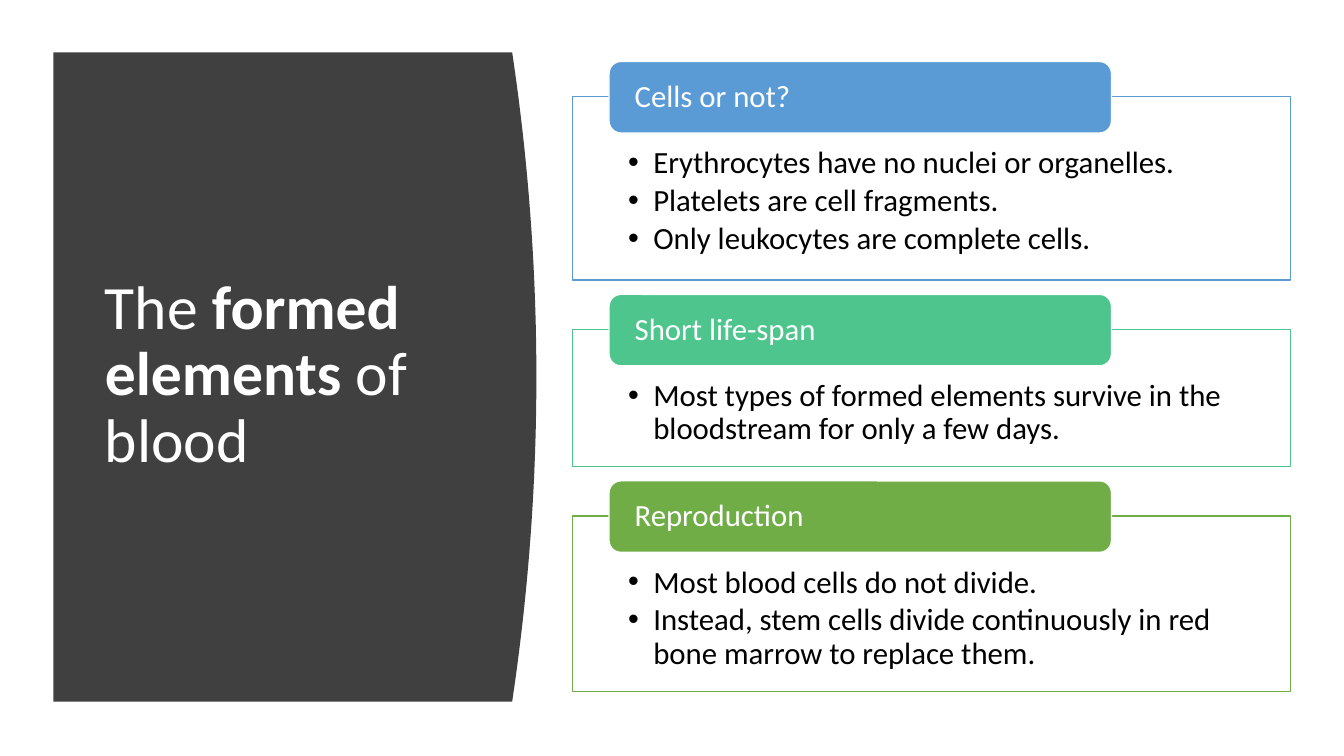
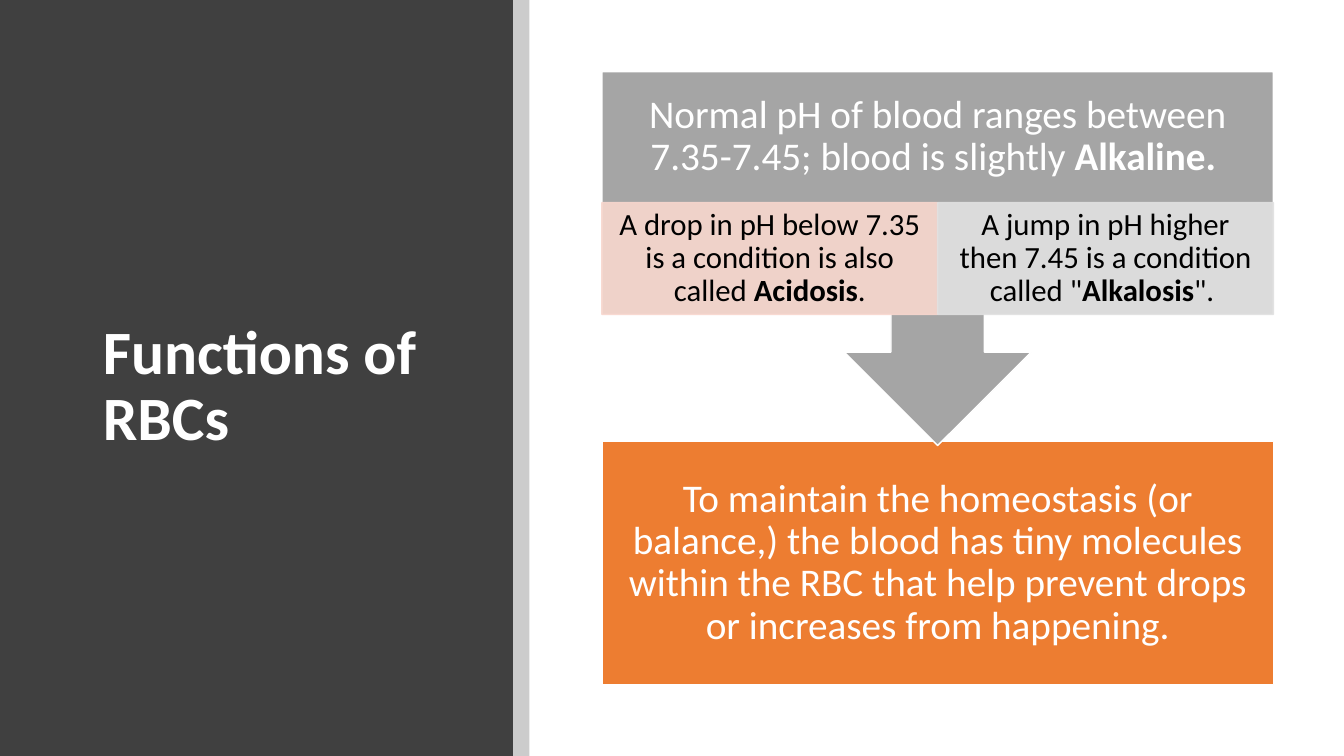
from dataclasses import dataclass

from lxml import etree
from pptx import Presentation
from pptx.dml.color import RGBColor
from pptx.enum import shapes, text
from pptx.oxml import ns
from pptx.util import Inches, Pt


@dataclass(frozen=True)
class Theme:
    font: str = "Calibri"
    title_size: int = 44
    lead_size: int = 28
    body_size: int = 22
    line_spacing: float = 0.9
    dark: str = "404040"
    strip: str = "CCCCCC"
    white: str = "FFFFFF"
    black: str = "000000"
    blue: str = "5B9BD5"
    teal: str = "4DC58D"
    green: str = "70AD47"
    orange: str = "ED7D31"
    grey: str = "A5A5A5"
    pale_orange: str = "F8D7CE"
    pale_grey: str = "E1E1E1"


THEME = Theme()
SLIDE_W, SLIDE_H = 13.33, 7.5
RECT = shapes.MSO_SHAPE.RECTANGLE


def rgb(color):
    return RGBColor.from_string(color)


def inches(box):
    return [Inches(value) for value in box]


def set_alpha(fill_format, percent):
    """Make a solid fill (of a shape or a line) partly transparent."""
    color = fill_format._xPr.find(".//" + ns.qn("a:srgbClr"))
    etree.SubElement(color, ns.qn("a:alpha")).set("val", str(percent * 1000))


def paint(shape, fill, line=None, opacity=100):
    shape.shadow.inherit = False
    shape.fill.solid()
    shape.fill.fore_color.rgb = rgb(fill)
    if line:
        shape.line.color.rgb = rgb(line)
        shape.line.width = Pt(1)
    else:
        shape.line.fill.background()
    if opacity < 100:
        set_alpha(shape.fill, opacity)
        if line:
            set_alpha(shape.line.fill, opacity)


def add_panel(slide, box, fill, line=None, kind=RECT, opacity=100):
    panel = slide.shapes.add_shape(kind, *inches(box))
    paint(panel, fill, line, opacity)
    return panel


def add_bullet(paragraph):
    properties = paragraph._p.get_or_add_pPr()
    properties.set("marL", str(Inches(0.25)))
    properties.set("indent", str(Inches(-0.25)))
    etree.SubElement(properties, ns.qn("a:buFont")).set("typeface", "Arial")
    etree.SubElement(properties, ns.qn("a:buChar")).set("char", "•")


def write(shape, lines, size, color, insets=None, anchor=text.MSO_ANCHOR.MIDDLE,
          align=text.PP_ALIGN.LEFT, bullets=False, space_after=0):
    """Fill a shape with paragraphs; words between ** marks are bold."""
    frame = shape.text_frame
    frame.word_wrap = True
    frame.auto_size = text.MSO_AUTO_SIZE.NONE
    frame.vertical_anchor = anchor
    if insets:
        (frame.margin_left, frame.margin_top,
         frame.margin_right, frame.margin_bottom) = inches(insets)
    for index, line in enumerate(lines):
        paragraph = frame.add_paragraph() if index else frame.paragraphs[0]
        paragraph.alignment = align
        paragraph.line_spacing = THEME.line_spacing
        paragraph.space_after = Pt(space_after)
        if bullets:
            add_bullet(paragraph)
        paragraph.font.name = THEME.font
        paragraph.font.size = Pt(size)
        paragraph.font.color.rgb = rgb(color)
        for part, words in enumerate(line.split("**")):
            if words:
                run = paragraph.add_run()
                run.text = words
                if part % 2:
                    run.font.bold = True


def place_title(slide, box, words):
    """Set the title placeholder in front of the panel already drawn."""
    title = slide.shapes.title
    title.element.getparent().append(title.element)
    title.left, title.top, title.width, title.height = inches(box)
    write(title, [words], THEME.title_size, THEME.white)


def add_curved_panel(slide, box, bulge, steps=40):
    """Dark panel whose right edge bows outwards by the bulge."""
    left, top, width, height = box
    edge = left + width - bulge
    curve = []
    for step in range(steps + 1):
        t = step / steps
        curve.append((Inches(edge + bulge * 4 * t * (1 - t)), Inches(top + height * t)))
    outline = slide.shapes.build_freeform(Inches(left), Inches(top))
    outline.add_line_segments(curve + [(Inches(left), Inches(top + height))], close=True)
    paint(outline.convert_to_shape(), THEME.dark)


def add_card(slide, box, heading, points, color):
    """Outlined list with a heading tab across its top edge."""
    left, top, width, _ = box
    card = add_panel(slide, box, THEME.white, color)
    write(card, points, THEME.body_size, THEME.black, (0.55, 0.5, 0.55, 0.17),
          text.MSO_ANCHOR.TOP, bullets=True, space_after=3.3)
    tab = add_panel(slide, (left + 0.36, top - 0.35, width * 0.7, 0.71), color,
                    THEME.white, shapes.MSO_SHAPE.ROUNDED_RECTANGLE)
    write(tab, [heading], THEME.body_size, THEME.white, (0.22, 0, 0.22, 0))


def add_cards(slide, left, top, width, gap, cards):
    for heading, color, height, points in cards:
        add_card(slide, (left, top, width, height), heading, points, color)
        top += height + gap


def add_ph_flow(slide, box, lead, branches, outcome):
    """Callout with two branches, pointing down to the outcome."""
    left, top, width, height = box
    callout_height, outcome_height = 3.71, 2.41
    lead_height, branch_height = 1.3, 1.11
    centred = text.PP_ALIGN.CENTER
    wide_insets = (0.22,) * 4

    result = add_panel(slide, (left, top + height - outcome_height, width, outcome_height),
                       THEME.orange, THEME.white)
    write(result, [outcome], THEME.lead_size, THEME.white, wide_insets, align=centred)

    callout = add_panel(slide, (left, top, width, callout_height), THEME.grey,
                        THEME.white, shapes.MSO_SHAPE.UP_ARROW_CALLOUT)
    callout.rotation = 180
    lead_text = slide.shapes.add_textbox(*inches((left, top, width, lead_height)))
    write(lead_text, [lead], THEME.lead_size, THEME.white, wide_insets, align=centred)

    branch_width = width / len(branches)
    for index, (words, color) in enumerate(branches):
        branch = add_panel(slide, (left + index * branch_width, top + lead_height,
                                   branch_width, branch_height), color, color, opacity=90)
        write(branch, [words], THEME.body_size, THEME.black,
              (0.17, 0.03, 0.17, 0.03), align=centred)


def build_formed_elements(slide):
    add_curved_panel(slide, (0.53, 0.52, 4.79, 6.44), bulge=0.24)
    place_title(slide, (0.94, 1.11, 3.74, 5.24), "The **formed elements **of blood")
    add_cards(slide, left=5.68, top=0.96, width=7.12, gap=0.49, cards=[
        ("Cells or not?", THEME.blue, 1.82, [
            "Erythrocytes have no nuclei or organelles.",
            "Platelets are cell fragments.",
            "Only leukocytes are complete cells."]),
        ("Short life-span", THEME.teal, 1.36, [
            "Most types of formed elements survive in the bloodstream for only a few days."]),
        ("Reproduction", THEME.green, 1.74, [
            "Most blood cells do not divide.",
            "Instead, stem cells divide continuously in red bone marrow to replace them."]),
    ])


def build_rbc_functions(slide):
    add_panel(slide, (0, 0, 5.09, SLIDE_H), THEME.dark)
    place_title(slide, (0.92, 0.89, 3.65, 5.91), "**Functions of RBCs**")
    add_panel(slide, (5.09, 0, 0.16, SLIDE_H), THEME.strip)
    add_ph_flow(
        slide, (5.97, 0.71, 6.66, 6.08),
        lead="Normal pH of blood ranges between 7.35-7.45; blood is slightly **Alkaline. **",
        branches=[
            ("A drop in pH below 7.35 is a condition is also called **Acidosis**.",
             THEME.pale_orange),
            ('A jump in pH higher then 7.45 is a condition called "**Alkalosis**". ',
             THEME.pale_grey),
        ],
        outcome="To maintain the homeostasis (or balance,) the blood has tiny molecules "
                "within the RBC that help prevent drops or increases from happening.")


def main():
    deck = Presentation()
    deck.slide_width, deck.slide_height = Inches(SLIDE_W), Inches(SLIDE_H)
    title_only = deck.slide_layouts[5]
    for build in (build_formed_elements, build_rbc_functions):
        build(deck.slides.add_slide(title_only))
    deck.save("out.pptx")


if __name__ == "__main__":
    main()
